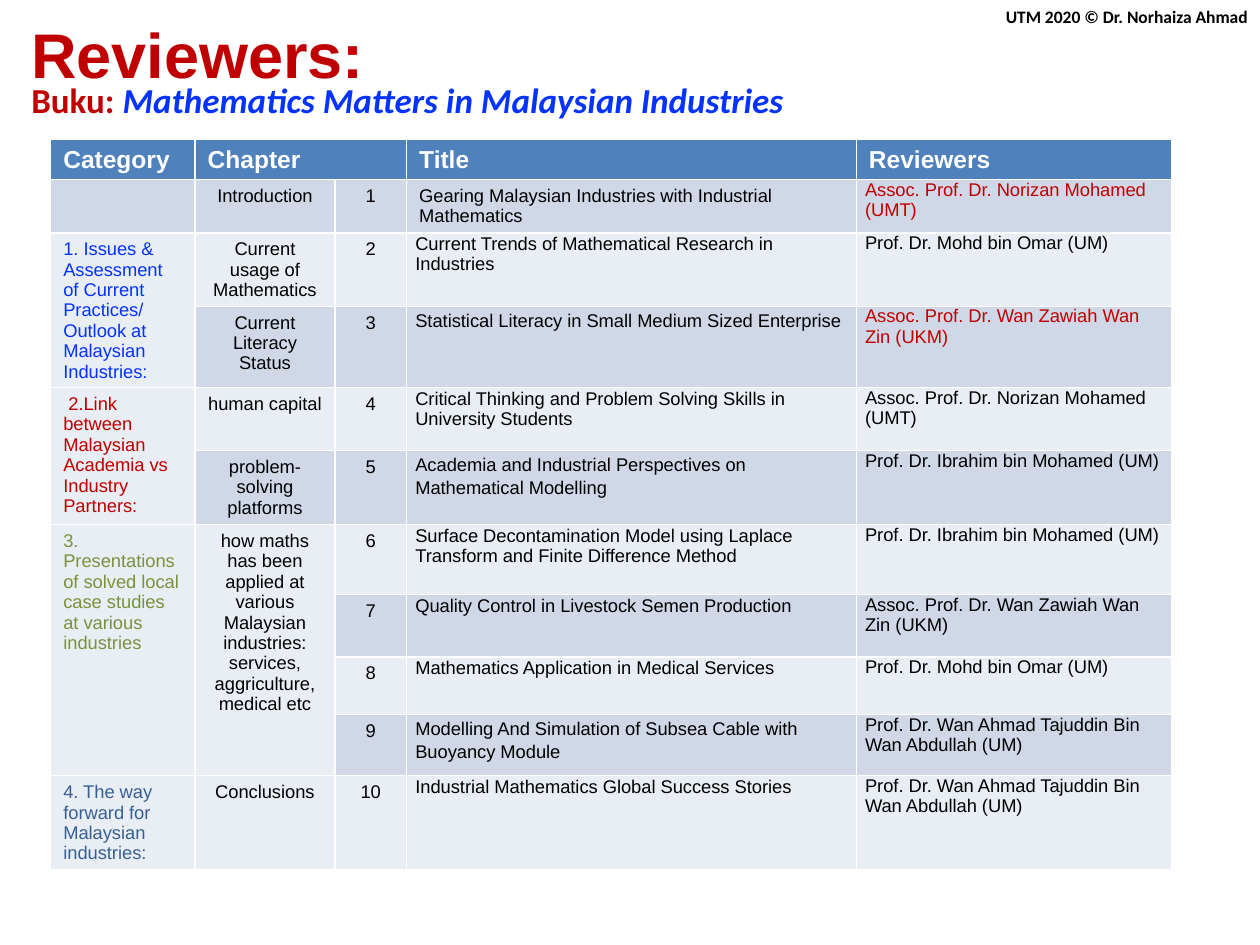
from pptx import Presentation
from pptx.dml.color import RGBColor
from pptx.enum.text import MSO_ANCHOR as Anchor, PP_ALIGN as Align
from pptx.util import Pt

WHITE = RGBColor(0xFF, 0xFF, 0xFF)
BLACK = RGBColor(0x00, 0x00, 0x00)
RED = RGBColor(0xC0, 0x00, 0x00)
BLUE = RGBColor(0x04, 0x32, 0xFF)
GREEN = RGBColor(0x77, 0x93, 0x3C)
NAVY = RGBColor(0x37, 0x60, 0x92)
HEADER = RGBColor(0x4F, 0x81, 0xBD)
BAND_DARK = RGBColor(0xD0, 0xD8, 0xE8)
BAND_LIGHT = RGBColor(0xE9, 0xED, 0xF4)

COLUMN_WIDTHS = [82.5, 79.9, 41, 257, 180]
ROW_HEIGHTS = [22.9, 30.5, 42, 46.5, 36, 42.3, 40, 35.5, 33.1, 34.9, 53.6]
HEADINGS = {0: "Category", 1: "Chapter", 3: "Title", 4: "Reviewers"}

CATEGORIES = [
    (2, 3, BLUE, ["1. Issues & Assessment of Current Practices/",
                  "Outlook at Malaysian Industries:"]),
    (4, 5, RED, [" 2.Link between Malaysian Academia vs Industry Partners:"]),
    (6, 9, GREEN, ["3. Presentations of solved local case studies at various industries"]),
    (10, 10, NAVY, ["4. The way forward for Malaysian industries:"]),
]
CHAPTERS = [
    (1, 1, "Introduction"),
    (2, 2, "Current usage of Mathematics"),
    (3, 3, "Current Literacy Status"),
    (4, 4, "human capital"),
    (5, 5, "problem-solving platforms"),
    (6, 9, "how maths has been applied at various Malaysian industries: "
           "services, aggriculture, medical etc"),
    (10, 10, "Conclusions"),
]
NORIZAN = "Assoc. Prof. Dr. Norizan Mohamed (UMT)"
OMAR = "Prof. Dr. Mohd bin Omar (UM)"
ZAWIAH = "Assoc. Prof. Dr. Wan Zawiah Wan Zin (UKM)"
IBRAHIM = "Prof. Dr. Ibrahim bin Mohamed (UM)"
TAJUDDIN = "Prof. Dr. Wan Ahmad Tajuddin Bin Wan Abdullah (UM)"
PAPERS = [
    ("Gearing Malaysian Industries with Industrial Mathematics", NORIZAN),
    ("Current Trends of Mathematical Research in Industries", OMAR),
    ("Statistical Literacy in Small Medium Sized Enterprise", ZAWIAH),
    ("Critical Thinking and Problem Solving Skills in University Students", NORIZAN),
    ("Academia and Industrial Perspectives on Mathematical Modelling", IBRAHIM),
    ("Surface Decontamination Model using Laplace Transform and Finite Difference Method",
     IBRAHIM),
    ("Quality Control in Livestock Semen Production", ZAWIAH),
    ("Mathematics Application in Medical Services", OMAR),
    ("Modelling And Simulation of Subsea Cable with Buoyancy Module", TAJUDDIN),
    ("Industrial Mathematics Global Success Stories", TAJUDDIN),
]
LOOSE_TITLES = {3, 5, 9}
RED_REVIEWERS = {1, 3}


def set_values(target, values):
    for name, value in values.items():
        setattr(target, name, value)


def add_span(para, text, color, **extra):
    span = para.add_run()
    span.text = text
    span.font.color.rgb = color
    set_values(span.font, {"name": "Arial", "size": Pt(10.5), "bold": False} | extra)


def add_line(page, box, spans, anchor=Anchor.TOP, align=Align.LEFT):
    shape = page.shapes.add_textbox(*map(Pt, box))
    set_values(shape.text_frame, {"word_wrap": True, "vertical_anchor": anchor})
    para = shape.text_frame.paragraphs[0]
    para.alignment = align
    for text, color, font in spans:
        add_span(para, text, color, **font)


def fill_cell(cell, lines, color=BLACK, font=None, para_format=None, margins=None):
    set_values(cell, margins or {})
    frame = cell.text_frame
    for index, line in enumerate(lines):
        para = frame.add_paragraph() if index else frame.paragraphs[0]
        set_values(para, para_format or {})
        add_span(para, line, color, **(font or {}))


def add_heading(page, box):
    left, top, width, height = box
    calibri = {"name": "Calibri", "bold": True}
    add_line(page, (0, 0, 720, 19.4),
             [("UTM 2020 © Dr. Norhaiza Ahmad", BLACK, calibri | {"size": Pt(10)})],
             align=Align.RIGHT)
    add_line(page, (left, top, 468, 60.5),
             [("Reviewers:", RED, {"size": Pt(36), "bold": True})], Anchor.MIDDLE)
    subtitle = calibri | {"size": Pt(20)}
    add_line(page, (left, top + 41.4, width, height - 41.4),
             [("Buku: ", RED, subtitle),
              ("Mathematics Matters in Malaysian Industries", BLUE,
               subtitle | {"italic": True})])


def add_review_table(page, box):
    table = page.shapes.add_table(len(ROW_HEIGHTS), len(COLUMN_WIDTHS), *map(Pt, box)).table
    for column, width in zip(table.columns, COLUMN_WIDTHS):
        column.width = Pt(width)
    for index, (row, height) in enumerate(zip(table.rows, ROW_HEIGHTS)):
        row.height = Pt(height)
        for cell in row.cells:
            cell.margin_bottom = Pt(0)
            cell.fill.solid()
            band = BAND_DARK if index % 2 else BAND_LIGHT
            cell.fill.fore_color.rgb = band if index else HEADER

    table.cell(0, 1).merge(table.cell(0, 2))
    for column, heading in HEADINGS.items():
        fill_cell(table.cell(0, column), [heading], WHITE, {"size": Pt(14), "bold": True})

    centred = {"alignment": Align.CENTER}
    compact = {"line_spacing": Pt(11.65)}
    groups = [(0, first, last, lines, color, compact) for first, last, color, lines in CATEGORIES]
    groups += [(1, first, last, [text], BLACK, centred) for first, last, text in CHAPTERS]
    for column, first, last, lines, color, para_format in groups:
        cell = table.cell(first, column)
        if last > first:
            cell.merge(table.cell(last, column))
        fill_cell(cell, lines, color, para_format=para_format)

    tight = {"margin_left": Pt(5), "margin_right": Pt(5), "margin_top": Pt(0)}
    for number, (title, reviewer) in enumerate(PAPERS, 1):
        fill_cell(table.cell(number, 2), [str(number)], para_format=centred)
        fill_cell(table.cell(number, 3), [title],
                  para_format={"line_spacing": 1.15} if number in LOOSE_TITLES else {},
                  margins=tight | {"margin_top": Pt(0.7)} if number > 1 else {})
        fill_cell(table.cell(number, 4), [reviewer],
                  RED if number in RED_REVIEWERS else BLACK, margins=tight)


def main():
    deck = Presentation()
    set_values(deck, {"slide_width": Pt(720), "slide_height": Pt(540)})
    page = deck.slides.add_slide(deck.slide_layouts[6])
    add_heading(page, (10.8, 0, 637.2, 80))
    add_review_table(page, (29, 79.7, sum(COLUMN_WIDTHS), sum(ROW_HEIGHTS)))
    deck.save("out.pptx")


if __name__ == "__main__":
    main()
